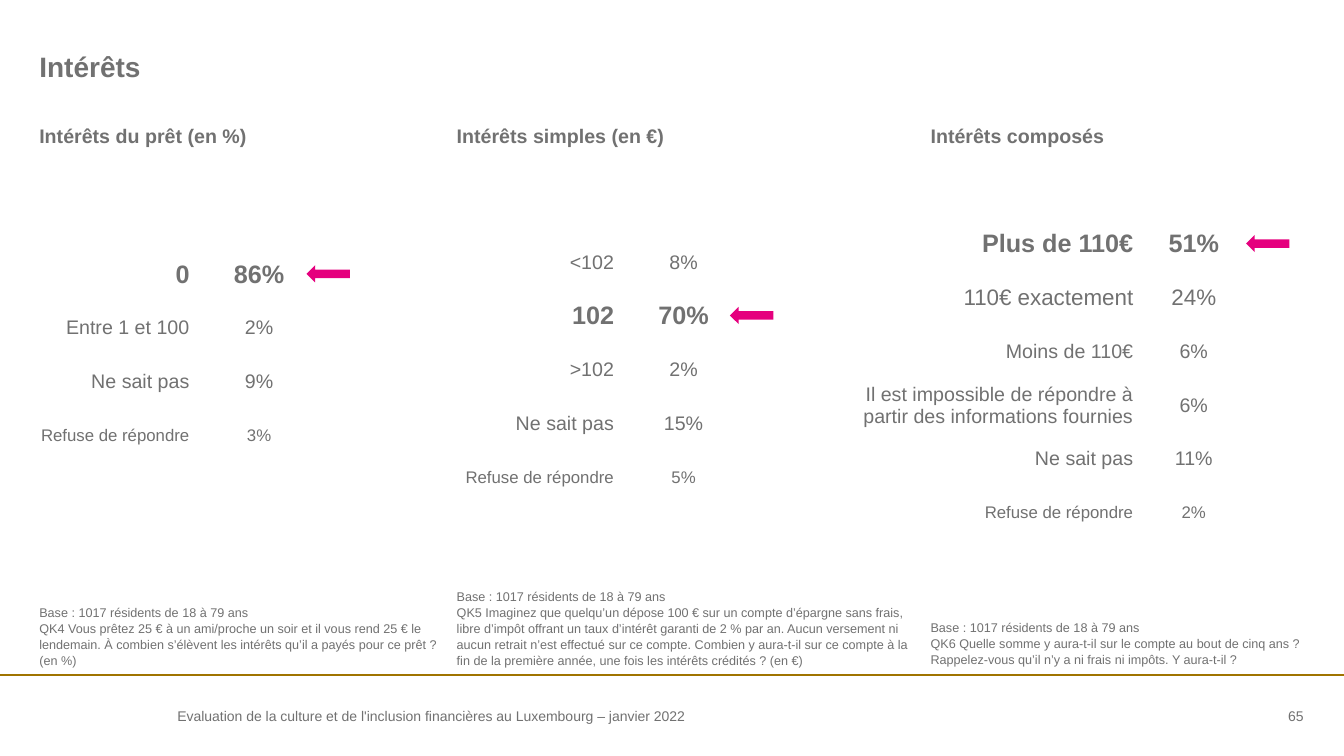
"""Build the slide on interest questions: three answer tables with notes."""
from pptx import Presentation
from pptx.dml.color import RGBColor
from pptx.enum import shapes, text
from pptx.oxml.ns import qn
from pptx.util import Inches, Pt
from lxml import etree

TITLE = "Intérêts"
FOOT = "Evaluation de la culture et de l'inclusion financières au Luxembourg – janvier 2022"
PAGE = "65"
BASE = "Base : 1017 résidents de 18 à 79 ans"
PANELS = [
    dict(head="Intérêts du prêt (en %)", left=0.39, note=(6.02, 4.01, 0.61),
         ask="QK4 Vous prêtez 25 € à un ami/proche un soir et il vous rend 25 € le lendemain. "
             "À combien s’élèvent les intérêts qu’il a payés pour ce prêt ? (en %)",
         grid=(0.11, 2.45), cols=(1.78, 1.36), arrow=3.04, right=0,
         rows=[("0", "86%", 18), ("Entre 1 et 100", "2%", 14), ("Ne sait pas", "9%", 14),
               ("Refuse de répondre", "3%", 12)]),
    dict(head="Intérêts simples (en €)", left=4.53, note=(5.87, 4.58, 0.76),
         ask="QK5 Imaginez que quelqu’un dépose 100 € sur un compte d’épargne sans frais, "
             "libre d’impôt offrant un taux d’intérêt garanti de 2 % par an. Aucun versement ni "
             "aucun retrait n’est effectué sur ce compte. Combien y aura-t-il sur ce compte à la "
             "fin de la première année, une fois les intérêts crédités ? (en €)",
         grid=(4.32, 2.33), cols=(1.78, 1.36), arrow=7.24, right=1,
         rows=[("<102", "8%", 14), ("102", "70%", 18), (">102", "2%", 14),
               ("Ne sait pas", "15%", 14), ("Refuse de répondre", "5%", 12)]),
    dict(head="Intérêts composés", left=9.23, note=(6.17, 3.7, 0.45),
         ask="QK6 Quelle somme y aura-t-il sur le compte au bout de cinq ans ? "
             "Rappelez-vous qu’il n’y a ni frais ni impôts. Y aura-t-il ?",
         grid=(8.52, 2.15), cols=(2.73, 1.18), arrow=12.36, right=0,
         rows=[("Plus de 110€", "51%", 18), ("110€ exactement", "24%", 16),
               ("Moins de 110€", "6%", 14),
               ("Il est impossible de répondre à partir des informations fournies", "6%", 14),
               ("Ne sait pas", "11%", 14), ("Refuse de répondre", "2%", 12)]),
]
THEME = dict(font="Arial", ink=RGBColor.from_string("717171"),
             mark=RGBColor.from_string("E5007E"), rule=RGBColor.from_string("A07400"),
             title=20, head=14, note=9, foot=10)
WIDE, HIGH, ROW = 13.33, 7.5, 1.6 / 3
ARROW = 0.43, 0.17
LEFT, MID, RIGHT = text.PP_ALIGN.LEFT, text.PP_ALIGN.CENTER, text.PP_ALIGN.RIGHT
TOP, CORE, LOW = text.MSO_ANCHOR.TOP, text.MSO_ANCHOR.MIDDLE, text.MSO_ANCHOR.BOTTOM


def style(frame, size, bold=False, align=LEFT, space=None):
    for para in frame.paragraphs:
        para.alignment = align
        para.line_spacing = space
        for run in para.runs:
            font = run.font
            font.name, font.size, font.bold = THEME["font"], Pt(size), bold
            font.color.rgb = THEME["ink"]


def write(box, words, size, bold=False, align=LEFT, anchor=TOP, inset=0):
    frame = box.text_frame
    frame.text = words
    frame.word_wrap = True
    frame.auto_size = text.MSO_AUTO_SIZE.NONE
    frame.vertical_anchor = anchor
    frame.margin_left = frame.margin_right = Inches(inset)
    frame.margin_top = frame.margin_bottom = 0
    style(frame, size, bold, align, 1.06)


def label(slide, place, words, size, **look):
    write(slide.shapes.add_textbox(*map(Inches, place)), words, size, **look)


def table(slide, panel):
    rows, cols = panel["rows"], panel["cols"]
    place = (*panel["grid"], sum(cols), ROW * len(rows))
    grid = slide.shapes.add_table(len(rows), len(cols), *map(Inches, place)).table
    grid.first_row = grid.horz_banding = False
    for col, width in zip(grid.columns, cols):
        col.width = Inches(width)
    for i, (name, share, size) in enumerate(rows):
        for j, words in enumerate((name, share)):
            cell = grid.cell(i, j)
            cell.fill.background()
            cell.vertical_anchor = CORE
            cell.margin_left = cell.margin_right = cell.margin_top = Inches(0.01)
            cell.margin_bottom = 0
            cell.text_frame.text = words
            style(cell.text_frame, size, i == panel["right"], (RIGHT, MID)[j])


def point(slide, panel):
    wide, high = ARROW
    top = panel["grid"][1] + ROW * (panel["right"] + 0.5) - high / 2
    place = panel["arrow"], top, wide, high
    arrow = slide.shapes.add_shape(shapes.MSO_SHAPE.LEFT_ARROW, *map(Inches, place))
    arrow.shadow.inherit = False
    arrow.fill.solid()
    arrow.fill.fore_color.rgb = THEME["mark"]
    arrow.line.fill.background()


def main():
    deck = Presentation()
    deck.slide_width, deck.slide_height = Inches(WIDE), Inches(HIGH)
    slide = deck.slides.add_slide(deck.slide_layouts[5])
    rule = slide.shapes.add_connector(shapes.MSO_CONNECTOR.STRAIGHT,
                                      *map(Inches, (0, 6.7, WIDE, 6.7)))
    rule.line.color.rgb, rule.line.width = THEME["rule"], Pt(1.5)
    etree.SubElement(rule._element.spPr, qn("a:effectLst"))
    title = slide.shapes.title
    title.left, title.top, title.width, title.height = map(Inches, (0.39, 0.47, 12.54, 0.44))
    write(title, TITLE, THEME["title"], bold=True)
    for panel in PANELS:
        left = panel["left"]
        label(slide, (left, 1.22, 2.26, 0.24), panel["head"], THEME["head"], bold=True)
        table(slide, panel)
        point(slide, panel)
        label(slide, (left, *panel["note"]), BASE + "\n" + panel["ask"], THEME["note"], anchor=LOW)
    label(slide, (1.66, 6.99, 5.35, 0.22), FOOT, THEME["foot"], anchor=CORE, inset=0.1)
    label(slide, (11.87, 6.99, 1.06, 0.22), PAGE, THEME["foot"], align=RIGHT, anchor=CORE)
    deck.save("out.pptx")


if __name__ == "__main__":
    main()
